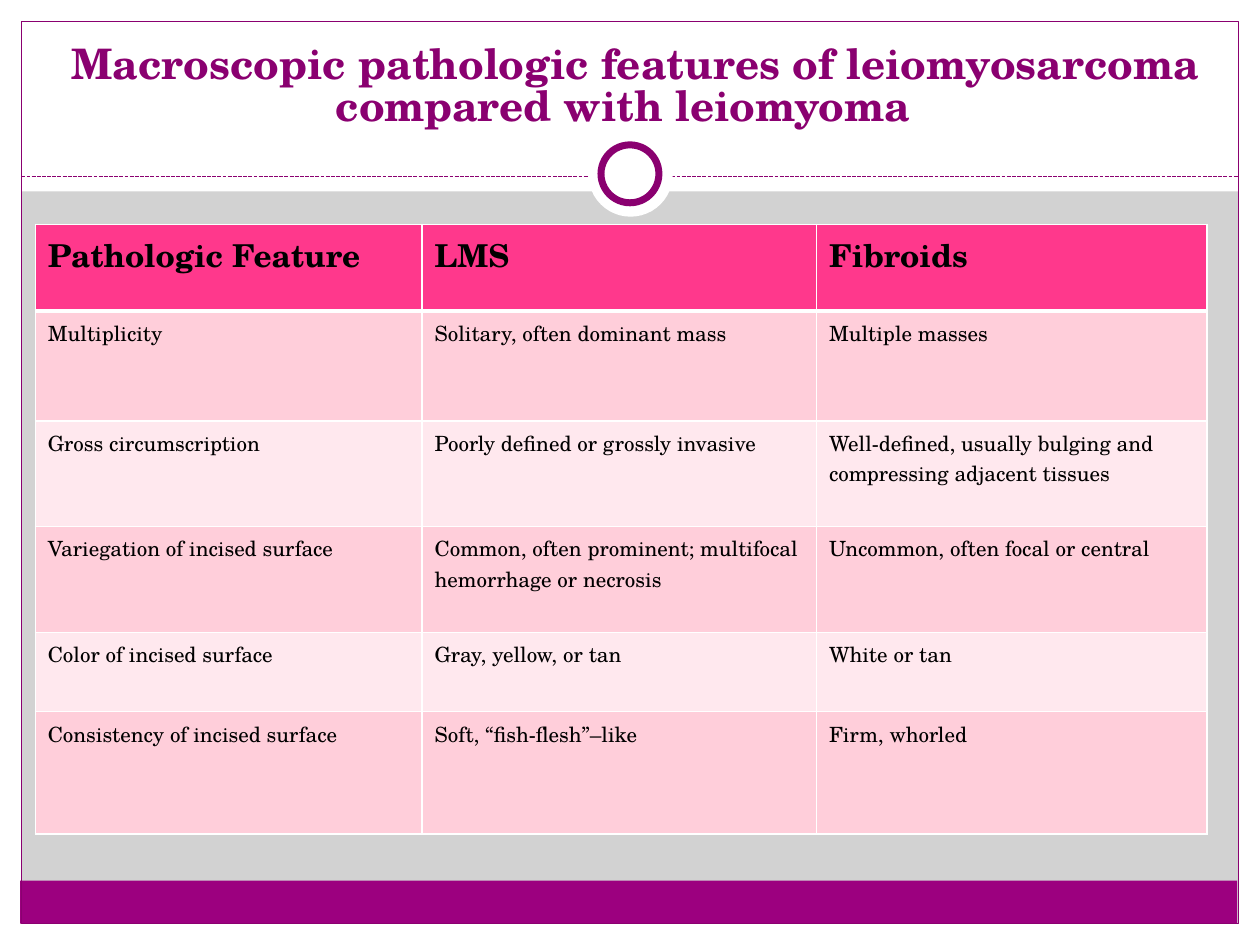
from pptx import Presentation
from pptx.dml.color import RGBColor as RGB
from pptx.enum.dml import MSO_LINE as Dash
from pptx.enum.shapes import MSO_CONNECTOR as Link, MSO_SHAPE as Form
from pptx.enum.text import MSO_ANCHOR as Anchor, PP_ALIGN as Align
from pptx.oxml import parse_xml
from pptx.oxml.ns import nsdecls
from pptx.util import Inches, Pt

FONT = "TeX Gyre Schola"
WHITE = RGB(0xFF, 0xFF, 0xFF)
BLACK = RGB(0, 0, 0)
GRAY = RGB(0xD2, 0xD2, 0xD2)
PLUM = RGB(0x8A, 0x00, 0x70)
PURPLE = RGB(0x9C, 0x00, 0x7F)
PINK = RGB(0xFF, 0x38, 0x8C)
ROSE = RGB(0xFF, 0xCE, 0xDA)
BLUSH = RGB(0xFF, 0xE8, 0xEE)

COLS = [3.07, 3.13, 3.1]
HEIGHTS = [0.69, 0.87, 0.84, 0.84, 0.63, 0.97]
ROWS = [
    ("Pathologic Feature", "LMS", "Fibroids"),
    ("Multiplicity", "Solitary, often dominant mass", "Multiple masses"),
    ("Gross circumscription", "Poorly defined or grossly invasive",
     "Well-defined, usually bulging and compressing adjacent tissues"),
    ("Variegation of incised surface",
     "Common, often prominent; multifocal hemorrhage or necrosis",
     "Uncommon, often focal or central"),
    ("Color of incised surface", "Gray, yellow, or tan", "White or tan"),
    ("Consistency of incised surface", "Soft, “fish-flesh”–like", "Firm, whorled"),
]


class Deck:
    """Hold the style and the current slide, and draw each kind of element."""

    def __init__(self, slide):
        self.slide = slide
        self.shapes = slide.shapes
        fill = slide.background.fill
        fill.solid()
        fill.fore_color.rgb = GRAY

    def shape(self, form, box, color=None, line=0):
        item = self.shapes.add_shape(form, *map(Inches, box))
        item.shadow.inherit = False
        if color is None:
            item.fill.background()
        else:
            item.fill.solid()
            item.fill.fore_color.rgb = color
        if line:
            item.line.color.rgb = PLUM
            item.line.width = Pt(line)
        else:
            item.line.fill.background()

    def rule(self, left, right, top):
        item = self.shapes.add_connector(
            Link.STRAIGHT, *map(Inches, (left, top, right, top)))
        item.line.color.rgb = PLUM
        item.line.width = Pt(0.75)
        item.line.dash_style = Dash.SQUARE_DOT
        props = item._element.spPr
        props.append(parse_xml(f"<a:effectLst {nsdecls('a')}/>"))
        props.find(".//{*}prstDash").set("val", "sysDash")

    def label(self, frame, text, size, color, bold):
        frame.text = text
        font = frame.paragraphs[0].runs[0].font
        font.name, font.size, font.bold = FONT, Pt(size), bold
        font.color.rgb = color

    def title(self, text, box):
        frame = self.shapes.add_textbox(*map(Inches, box)).text_frame
        frame.word_wrap = True
        frame.vertical_anchor = Anchor.BOTTOM
        self.label(frame, text, 24, PLUM, True)
        para = frame.paragraphs[0]
        para.alignment = Align.CENTER
        para.line_spacing = 0.83

    def border(self, cell, widths):
        props = cell._tc.get_or_add_tcPr()
        for spot, (side, width) in enumerate(zip("LRTB", widths)):
            props.insert(spot, parse_xml(
                f'<a:ln{side} {nsdecls("a")} w="{Pt(width)}"><a:solidFill>'
                f'<a:srgbClr val="{WHITE}"/></a:solidFill></a:ln{side}>'))

    def table(self, rows, left, top, cols, heights):
        box = left, top, sum(cols), sum(heights)
        grid = self.shapes.add_table(len(rows), len(cols), *map(Inches, box)).table
        for col, width in zip(grid.columns, cols):
            col.width = Inches(width)
        for r, (row, height) in enumerate(zip(rows, heights)):
            grid.rows[r].height = Inches(height)
            head = r == 0
            color = PINK if head else (BLUSH, ROSE)[r % 2]
            for c, text in enumerate(row):
                cell = grid.cell(r, c)
                cell.fill.solid()
                cell.fill.fore_color.rgb = color
                self.label(cell.text_frame, text, 18 if head else 12, BLACK, head)
                self.border(cell, (1, 1, 3 if r == 1 else 1, 3 if head else 1))


def main():
    show = Presentation()
    show.slide_width, show.slide_height = Inches(10), Inches(7.5)
    deck = Deck(show.slides.add_slide(show.slide_layouts[6]))
    for box in [(0, 7.33, 10, 0.17), (0, 0, 10, 1.52),
                (0, 0, 0.17, 7.5), (9.83, 0, 0.17, 7.5)]:
        deck.shape(Form.RECTANGLE, box, WHITE)
    deck.shape(Form.RECTANGLE, (0.16, 6.99, 9.66, 0.34), PURPLE)
    deck.shape(Form.RECTANGLE, (0.17, 0.17, 9.66, 7.16), line=0.75)
    deck.rule(0.17, 9.83, 1.4)
    deck.shape(Form.OVAL, (4.67, 1.05, 0.67, 0.67), WHITE)
    deck.shape(Form.OVAL, (4.77, 1.15, 0.46, 0.46), WHITE, 4)
    deck.title(" Macroscopic pathologic features of leiomyosarcoma"
               " compared with leiomyoma ", (0.33, 0.25, 9.33, 0.83))
    deck.table(ROWS, 0.28, 1.78, COLS, HEIGHTS)
    show.save("out.pptx")


if __name__ == "__main__":
    main()
